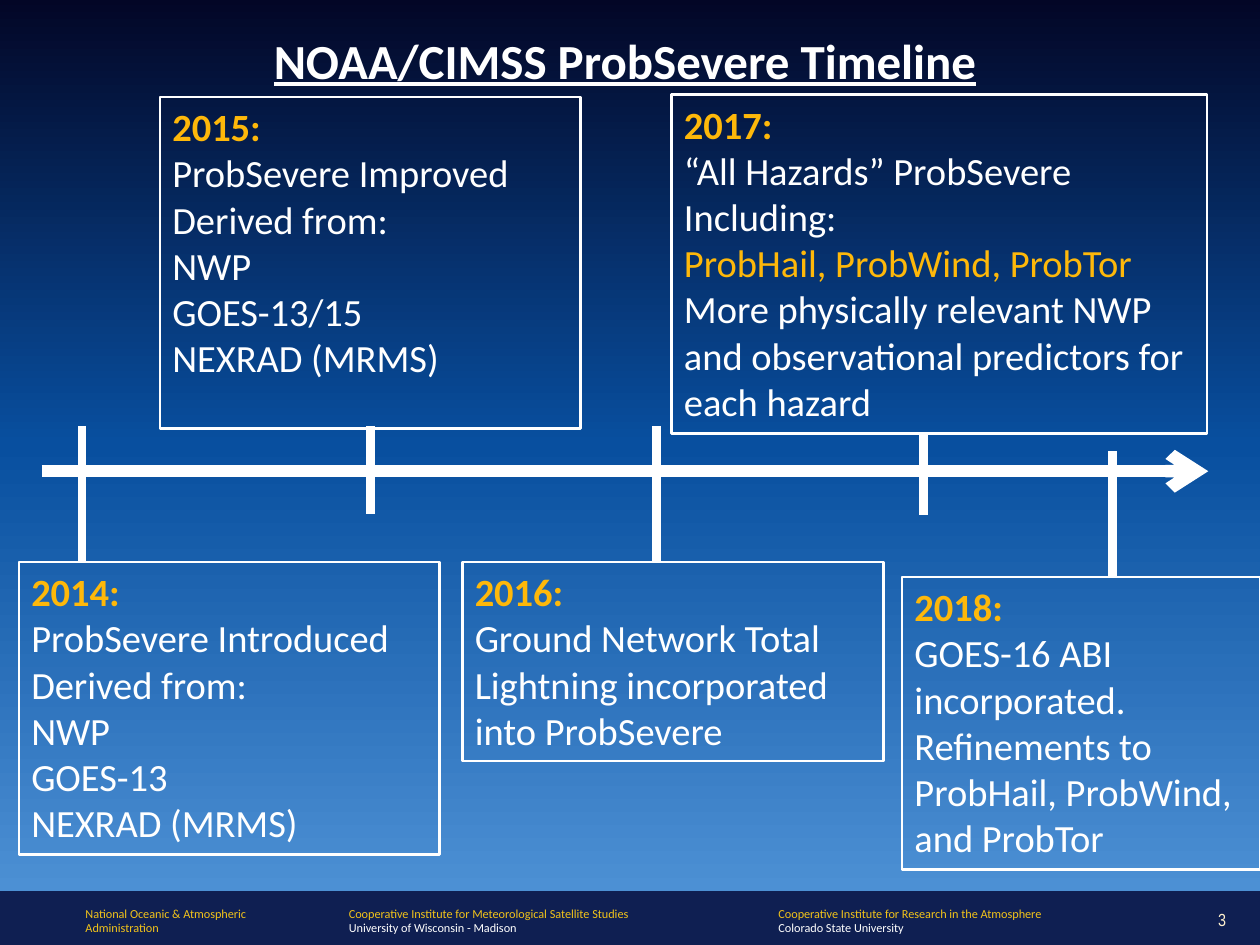
"""Build the NOAA/CIMSS ProbSevere timeline slide."""
from copy import deepcopy

from lxml.etree import SubElement
from pptx import Presentation
from pptx.dml.color import RGBColor
from pptx.enum.shapes import MSO_CONNECTOR, MSO_SHAPE
from pptx.enum.text import MSO_ANCHOR, PP_ALIGN
from pptx.oxml.ns import qn
from pptx.util import Inches, Pt

WHITE, GOLD, FOOTER_GOLD, CREAM, NAVY = "FFFFFF", "FEB80A", "F2C31A", "FFF1CE", "0F1F52"
SKY = [(0, "030626"), (0.5, "084F9F"), (1, "4C90D4")]
TITLE = "NOAA/CIMSS ProbSevere Timeline"
AXIS_Y = 3.74

EVENTS = [
    ("2014:", (0.15, 4.46, 3.34, 2.32),
     ["ProbSevere Introduced", "Derived from:", "NWP", "GOES-13", "NEXRAD (MRMS)"]),
    ("2015:", (1.27, 0.77, 3.34, 2.63),
     ["ProbSevere Improved", "Derived from:", "NWP", "GOES-13/15", "NEXRAD (MRMS)"]),
    ("2016:", (3.67, 4.46, 3.34, 1.58),
     ["Ground Network Total", "Lightning incorporated into ProbSevere"]),
    ("2017:", (5.33, 0.75, 4.25, 2.69),
     ["“All Hazards” ProbSevere", "Including:", "ProbHail, ProbWind, ProbTor",
      "More physically relevant NWP and observational predictors for each hazard"]),
    ("2018:", (7.16, 4.58, 2.84, 2.32),
     ["GOES-16 ABI incorporated.", "Refinements to ProbHail, ProbWind, and ProbTor"]),
]
HIGHLIGHTS = {"ProbHail, ProbWind, ProbTor"}
TICKS = [(0.65, 3.38, 4.46), (2.94, 3.38, 4.08), (5.21, 3.38, 4.46),
         (7.33, 3.45, 4.09), (8.83, 3.58, 4.58)]
FOOTERS = [
    (0.58, 1.58, [("National Oceanic & Atmospheric", FOOTER_GOLD),
                  ("Administration", FOOTER_GOLD)]),
    (2.67, 2.92, [("Cooperative Institute for Meteorological Satellite Studies", FOOTER_GOLD),
                  ("University of Wisconsin - Madison", WHITE)]),
    (6.08, 2.92, [("Cooperative Institute for Research in the Atmosphere", FOOTER_GOLD),
                  ("Colorado State University", WHITE)]),
]


def rgb(color):
    return RGBColor.from_string(color)


def write(sp, lines, size, font="Calibri", align=PP_ALIGN.LEFT, anchor=MSO_ANCHOR.TOP):
    tf = sp.text_frame
    tf.word_wrap = True
    tf.vertical_anchor = anchor
    for i, (text, color, *bold) in enumerate(lines):
        p = tf.add_paragraph() if i else tf.paragraphs[0]
        p.add_run().text = text
        p.alignment = align
        p.font.name, p.font.size, p.font.bold = font, Pt(size), bool(bold)
        p.font.color.rgb = rgb(color)
    return tf


def add_text(s, box, lines, size, **style):
    return write(s.shapes.add_textbox(*map(Inches, box)), lines, size, **style)


def add_rect(s, box):
    sp = s.shapes.add_shape(MSO_SHAPE.RECTANGLE, *map(Inches, box))
    sp.shadow.inherit = False
    return sp


def add_line(s, x1, y1, x2, y2, width, arrow=False):
    c = s.shapes.add_connector(MSO_CONNECTOR.STRAIGHT, *map(Inches, (x1, y1, x2, y2)))
    c.line.color.rgb = rgb(WHITE)
    c.line.width = Pt(width)
    if arrow:
        SubElement(c._element.spPr.find(qn("a:ln")), qn("a:tailEnd"), type="arrow")
    SubElement(c._element.spPr, qn("a:effectLst"))


def add_sky(s):
    sp = add_rect(s, (0, -0.02, 10, 7.09))
    sp.line.fill.background()
    sp.fill.gradient()
    sp.fill.gradient_angle = 270
    stops = sp._element.spPr.find(".//" + qn("a:gsLst"))
    stops.append(deepcopy(stops[-1]))
    for stop, (position, color) in zip(sp.fill.gradient_stops, SKY):
        stop.position = position
        stop.color.rgb = rgb(color)


def add_event(s, year, box, details):
    sp = add_rect(s, box)
    sp.fill.background()
    sp.line.color.rgb = rgb(WHITE)
    sp.line.width = Pt(1.5)
    lines = [(d, GOLD if d in HIGHLIGHTS else WHITE) for d in details]
    write(sp, [(year, GOLD, True)] + lines, 22)


def main():
    prs = Presentation()
    prs.slide_width, prs.slide_height = Inches(10), Inches(7.5)
    s = prs.slides.add_slide(prs.slide_layouts[6])
    s.background.fill.solid()
    s.background.fill.fore_color.rgb = rgb(NAVY)
    add_sky(s)
    for left, width, lines in FOOTERS:
        add_text(s, (left, 7.14, width, 0.34), lines, 7)
    add_text(s, (9.33, 7.17, 0.5, 0.25), [("3", CREAM)], 10, font="Arial Narrow",
             align=PP_ALIGN.RIGHT, anchor=MSO_ANCHOR.MIDDLE)
    tf = add_text(s, (0.42, 0.19, 9.08, 0.57), [(TITLE, WHITE, True)], 28,
                  align=PP_ALIGN.CENTER)
    tf.paragraphs[0].font.underline = True
    add_line(s, 0.33, AXIS_Y, 9.59, AXIS_Y, 7, arrow=True)
    for x, top, bottom in TICKS:
        add_line(s, x, top, x, bottom, 5)
    for event in EVENTS:
        add_event(s, *event)
    prs.save("out.pptx")


if __name__ == "__main__":
    main()
